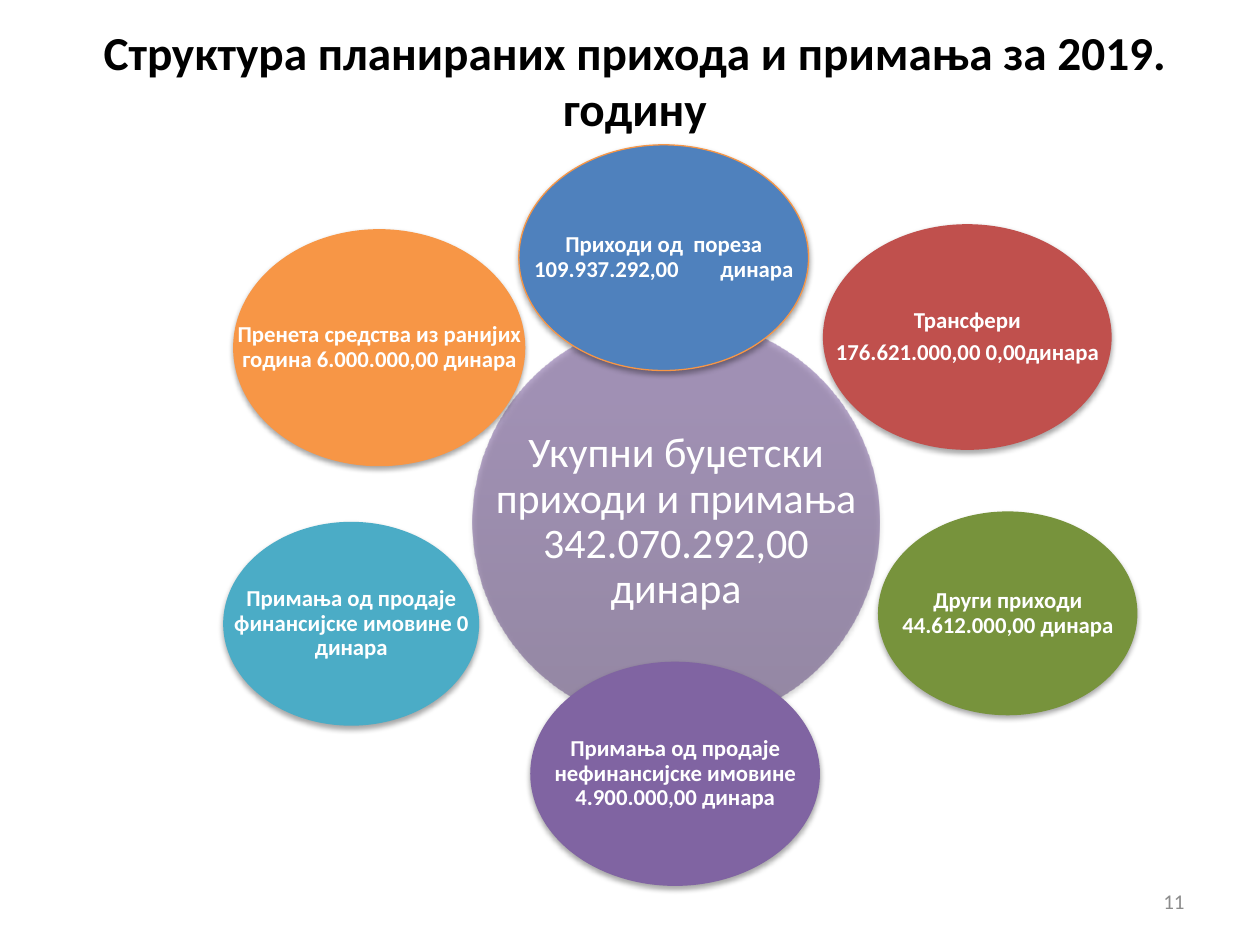
from dataclasses import dataclass
from typing import Optional

from lxml import etree
from pptx import Presentation
from pptx import util as u
from pptx.dml.color import RGBColor
from pptx.enum import shapes, text
from pptx.oxml import ns, parse_xml

FONT = "Calibri"
BLACK = RGBColor(0x00, 0x00, 0x00)
WHITE = RGBColor(0xFF, 0xFF, 0xFF)
GRAY = RGBColor(0x8C, 0x8C, 0x8C)
BLUE = RGBColor(0x4F, 0x81, 0xBD)
RED = RGBColor(0xC0, 0x50, 0x4D)
GREEN = RGBColor(0x77, 0x93, 0x3C)
PURPLE = RGBColor(0x80, 0x64, 0xA2)
TEAL = RGBColor(0x4B, 0xAC, 0xC6)
ORANGE = RGBColor(0xF7, 0x96, 0x46)
DARK_VIOLET = RGBColor(0x56, 0x3D, 0x74)
MID_VIOLET = RGBColor(0x70, 0x50, 0x97)
VIOLET = RGBColor(0x70, 0x4F, 0x99)
HUB_STOPS = [(0, DARK_VIOLET), (80, MID_VIOLET), (100, VIOLET)]


@dataclass(frozen=True)
class Box:
    left: float
    top: float
    width: float
    height: float

    def emu(self) -> list[u.Length]:
        return [u.Cm(v) for v in (self.left, self.top, self.width, self.height)]


@dataclass(frozen=True)
class Run:
    text: str
    spacing: float = 0


@dataclass(frozen=True)
class Style:
    size: float
    color: RGBColor = WHITE
    bold: bool = False
    align: text.PP_ALIGN = text.PP_ALIGN.CENTER
    inset_x: float = 0.25
    inset_y: float = 0.13
    line_spacing: Optional[float] = None
    space_after: float = 0


@dataclass(frozen=True)
class Bubble:
    box: Box
    fill: RGBColor
    paragraphs: list[list[Run]]
    line: Optional[RGBColor] = None


TITLE = Style(27, BLACK, bold=True)
NUMBER = Style(12, GRAY, align=text.PP_ALIGN.RIGHT)
HUB = Style(24, inset_x=0.08, inset_y=0.08, line_spacing=0.9, space_after=8.4)
LABEL = Style(13, bold=True, inset_x=0.05, inset_y=0.05,
              line_spacing=0.9, space_after=4.5)

HUB_BOX = Box(9.53, 6.43, 8.2, 8.2)
BUBBLES = [
    Bubble(Box(10.46, 2.92, 5.84, 4.55), BLUE,
           [[Run("Приходи од"), Run(" ", 3), Run("пореза 109.937.292,00"),
             Run(" ", 21), Run("динара")]], line=ORANGE),
    Bubble(Box(16.59, 4.52, 5.82, 4.55), RED,
           [[Run("Трансфери")], [Run("176.621.000,00 0,00динара")]]),
    Bubble(Box(17.7, 10.31, 5.23, 4.11), GREEN,
           [[Run("Други приходи 44.612.000,00 динара")]]),
    Bubble(Box(10.69, 13.34, 5.84, 4.52), PURPLE,
           [[Run("Примања од продаје нефинансијске имовине 4.900.000,00 динара")]]),
    Bubble(Box(4.5, 10.52, 5.16, 4.11), TEAL,
           [[Run("Примања од продаје финансијске имовине 0 динара")]]),
    Bubble(Box(4.7, 4.62, 5.89, 4.78), ORANGE,
           [[Run("Пренета средства из ранијих година 6.000.000,00 динара")]]),
]


def add_text(s, box: Box, paragraphs: list[list[Run]], style: Style) -> None:
    tf = s.shapes.add_textbox(*box.emu()).text_frame
    tf.word_wrap = True
    tf.vertical_anchor = text.MSO_ANCHOR.MIDDLE
    tf.margin_left = tf.margin_right = u.Cm(style.inset_x)
    tf.margin_top = tf.margin_bottom = u.Cm(style.inset_y)
    for i, runs in enumerate(paragraphs):
        p = tf.add_paragraph() if i else tf.paragraphs[0]
        p.alignment = style.align
        p.line_spacing = style.line_spacing
        p.space_after = u.Pt(style.space_after)
        for run in runs:
            r = p.add_run()
            r.text = run.text
            r.font.name = FONT
            r.font.size = u.Pt(style.size)
            r.font.bold = style.bold
            r.font.color.rgb = style.color
            if run.spacing:
                r.font._element.set("spc", str(round(run.spacing * 100)))


def add_ellipse(s, box: Box, line: Optional[RGBColor] = None):
    sp = s.shapes.add_shape(shapes.MSO_SHAPE.OVAL, *box.emu())
    if line is None:
        sp.line.fill.background()
    else:
        sp.line.color.rgb = line
        sp.line.width = u.Pt(0.75)
    sp.shadow.inherit = False
    effects = sp._element.spPr.find(ns.qn("a:effectLst"))
    shadow = etree.SubElement(
        effects, ns.qn("a:outerShdw"), blurRad=str(u.Pt(3.1)),
        dist=str(u.Pt(1.8)), dir="5400000", rotWithShape="0")
    color = etree.SubElement(shadow, ns.qn("a:srgbClr"), val=str(BLACK))
    etree.SubElement(color, ns.qn("a:alpha"), val="35000")
    return sp


def fill_gradient(sp, stops: list[tuple[int, RGBColor]], alpha: int) -> None:
    sp.fill.gradient()
    spPr = sp._element.spPr
    gs = "".join(
        f'<a:gs pos="{pos * 1000}"><a:srgbClr val="{color}">'
        f'<a:alpha val="{alpha * 1000}"/></a:srgbClr></a:gs>'
        for pos, color in stops)
    spPr.replace(spPr.find(ns.qn("a:gradFill")), parse_xml(
        f'<a:gradFill {ns.nsdecls("a")} rotWithShape="1"><a:gsLst>{gs}</a:gsLst>'
        '<a:lin ang="16200000" scaled="0"/></a:gradFill>'))


def main() -> None:
    prs = Presentation()
    prs.slide_width, prs.slide_height = u.Cm(25.4), u.Cm(19.05)
    s = prs.slides.add_slide(prs.slide_layouts[6])

    add_text(s, Box(1.37, 0.69, 22.86, 1.83),
             [[Run("Структура планираних прихода и примања за 2019. годину")]], TITLE)
    add_text(s, Box(18.21, 17.65, 5.92, 1.02), [[Run("11")]], NUMBER)

    fill_gradient(add_ellipse(s, HUB_BOX), HUB_STOPS, alpha=50)
    add_text(s, HUB_BOX,
             [[Run("Укупни буџетски приходи и примања 342.070.292,00 динара")]], HUB)

    for bubble in BUBBLES:
        sp = add_ellipse(s, bubble.box, bubble.line)
        sp.fill.solid()
        sp.fill.fore_color.rgb = bubble.fill
        add_text(s, bubble.box, bubble.paragraphs, LABEL)

    prs.save("out.pptx")


if __name__ == "__main__":
    main()
